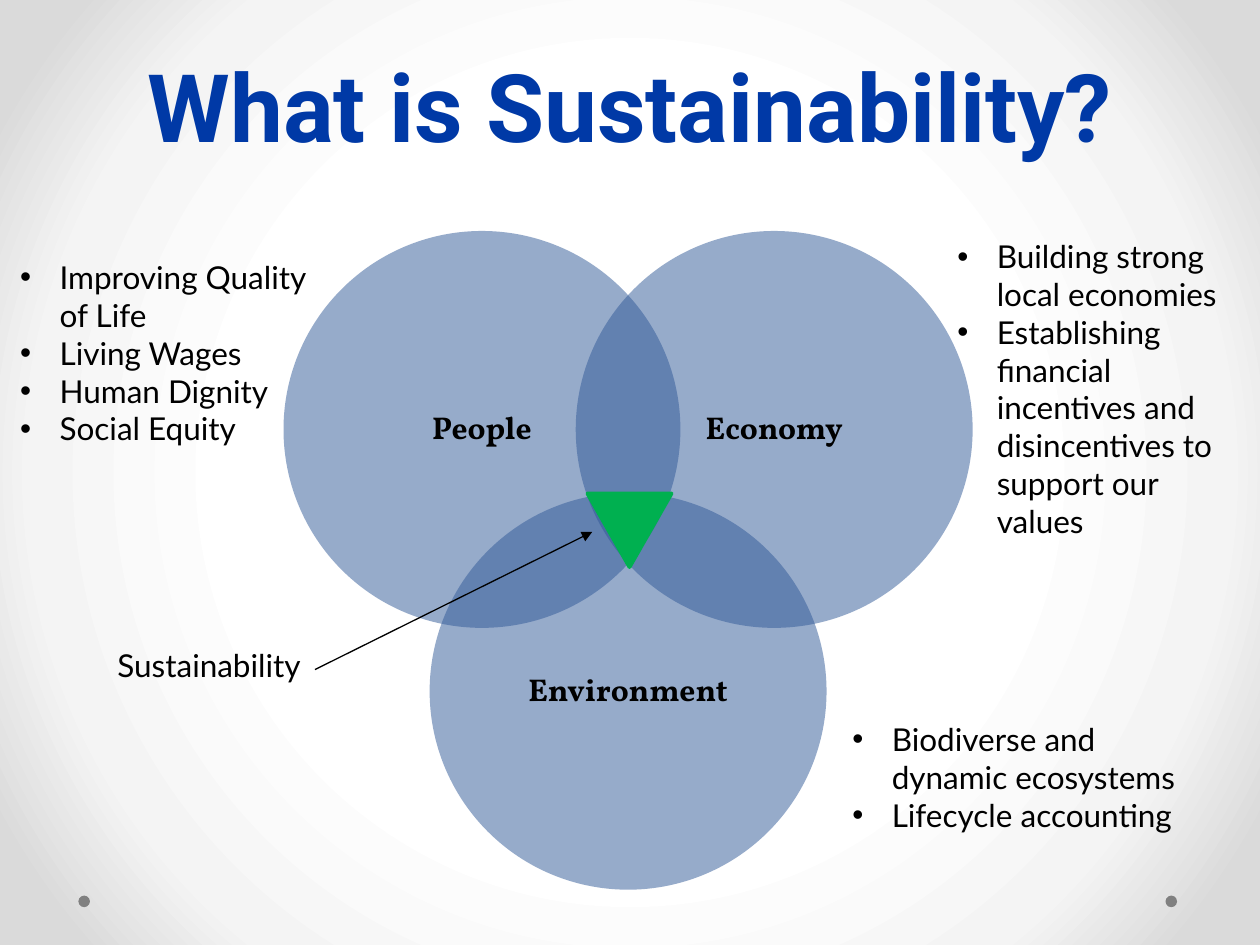
import pptx
import pptx.util
import pptx.dml.color
import pptx.enum.shapes
import pptx.enum.text
import pptx.oxml
import pptx.oxml.ns

Pt = pptx.util.Pt
Form = pptx.enum.shapes.MSO_SHAPE
Align = pptx.enum.text.PP_ALIGN
Anchor = pptx.enum.text.MSO_ANCHOR
Fit = pptx.enum.text.MSO_AUTO_SIZE
COLORS = {"title": "0039A6", "text": "000000", "circle": "2F5897",
          "core": "00B050", "dot": "808080"}
GLOW = {50: "FFFFFF", 76: "F4F4F4", 92: "DADADA"}
LISTS = [
    ((540, 132, 168, 181.5), ["Building strong local economies",
     "Establishing financial incentives and disincentives to support our values"]),
    ((480, 408, 204, 72.7), ["Biodiverse and dynamic ecosystems", "Lifecycle accounting"]),
    ((4.5, 144, 193.5, 138), ["Improving Quality of Life", "Living Wages",
                              "Human Dignity", "Social Equity"]),
]


def tint(name):
    """Return the named colour."""
    return pptx.dml.color.RGBColor.from_string(COLORS[name])


def node(tag, inner="", **attrs):
    """Build a DrawingML element from its tag, content and attributes."""
    pairs = "".join(f' {key}="{val}"' for key, val in attrs.items())
    space = pptx.oxml.ns.nsdecls("a")
    return pptx.oxml.parse_xml(f"<a:{tag} {space}{pairs}>{inner}</a:{tag}>")


def write(frame, lines, size=18, font="Lato", color="text", bold=False,
          align=None, space=None, bullet=False):
    """Fill a text frame with formatted paragraphs."""
    frame.word_wrap = True
    for i, line in enumerate(lines):
        para = frame.add_paragraph() if i else frame.paragraphs[0]
        para.alignment, para.line_spacing = align, space
        run = para.add_run()
        run.text = line
        run.font.size, run.font.name, run.font.bold = Pt(size), font, bold
        run.font.color.rgb = tint(color)
        if bullet:
            props = para._p.get_or_add_pPr()
            props.set("marL", str(Pt(22.5)))
            props.set("indent", str(Pt(-22.5)))
            props.append(node("buFont", typeface="Arial"))
            props.append(node("buChar", char="•"))


def shape(slide, form, box, color):
    """Add a flat filled shape without an outline."""
    item = slide.shapes.add_shape(form, *map(Pt, box))
    item.shadow.inherit = False
    item.fill.solid()
    item.fill.fore_color.rgb = tint(color)
    item.line.fill.background()
    return item


def note(slide, box, lines, bullet=False):
    """Add a text box or a bulleted list."""
    frame = slide.shapes.add_textbox(*map(Pt, box)).text_frame
    write(frame, lines, bullet=bullet)
    frame.auto_size = Fit.SHAPE_TO_FIT_TEXT


def backdrop(slide, box):
    """Paint the radial background and the two corner dots."""
    left, top, width, height = box
    fill = slide.background.fill
    fill.gradient()
    grad = next(slide._element.iter(pptx.oxml.ns.qn("a:gradFill")))
    for child in list(grad):
        grad.remove(child)
    stops = "".join(f'<a:gs pos="{pos}000"><a:srgbClr val="{hue}"/></a:gs>'
                    for pos, hue in GLOW.items())
    grad.append(node("gsLst", stops))
    grad.append(node("path", '<a:fillToRect l="50000" t="50000" r="50000" b="50000"/>',
                     path="circle"))
    for x in (44.8, width - 54):
        shape(slide, Form.OVAL, (left + x, top + height - 28.2, 6.6, 6.6), "dot")


def header(slide, box, text):
    """Place and format the title."""
    title = slide.shapes.title
    title.left, title.top, title.width, title.height = map(Pt, box)
    title.text_frame.vertical_anchor = Anchor.BOTTOM
    write(title.text_frame, [text], size=54, font="Roboto", color="title",
          bold=True, align=Align.CENTER, space=Pt(58))


def venn(slide, box):
    """Draw three overlapping circles and their common core."""
    left, top, width, height = box
    side = 226.8
    step = (width - side) / 2
    spots = [("People", 0, 0), ("Environment", step, height - side),
             ("Economy", 2 * step, 0)]
    for name, x, y in spots:
        ring = shape(slide, Form.OVAL, (left + x, top + y, side, side), "circle")
        hue = next(ring._element.spPr.iter(pptx.oxml.ns.qn("a:srgbClr")))
        hue.append(node("alpha", val=50000))
        frame = ring.text_frame
        frame.vertical_anchor = Anchor.MIDDLE
        frame.margin_left = frame.margin_right = Pt(5)
        frame.margin_top = frame.margin_bottom = Pt(5)
        write(frame, [name], font="Vollkorn", bold=True, align=Align.CENTER, space=0.9)
    core = shape(slide, Form.ISOSCELES_TRIANGLE,
                 (left + width / 2 - 23.2, top + 150, 48, 42), "core")
    core.rotation = 180
    core.line.color.rgb = tint("core")
    core.line.width = Pt(2.25)


def callout(slide, box, text):
    """Label the core with an arrow from the label."""
    left, top, width, height = box
    kind = pptx.enum.shapes.MSO_CONNECTOR.STRAIGHT
    ends = (left + 120, top + height - 12.2, left + width, top)
    arrow = slide.shapes.add_connector(kind, *map(Pt, ends))
    arrow.line.color.rgb = tint("text")
    arrow.line.width = Pt(0.75)
    arrow.line._get_or_add_ln().append(node("tailEnd", type="triangle"))
    arrow._element.spPr.append(node("effectLst"))
    note(slide, (left, top + height - 29, 120, 29), [text])


def main():
    """Build and save the slide."""
    deck = pptx.Presentation()
    deck.slide_width, deck.slide_height = Pt(720), Pt(540)
    slide = deck.slides.add_slide(deck.slide_layouts[5])
    backdrop(slide, (0, 0, 720, 540))
    header(slide, (36, 0, 648, 96), "What is Sustainability?")
    for box, lines in LISTS:
        note(slide, box, lines, bullet=True)
    venn(slide, (162, 132, 393.8, 376.4))
    callout(slide, (60, 304, 278.4, 90.8), "Sustainability")
    deck.save("out.pptx")


if __name__ == "__main__":
    main()
